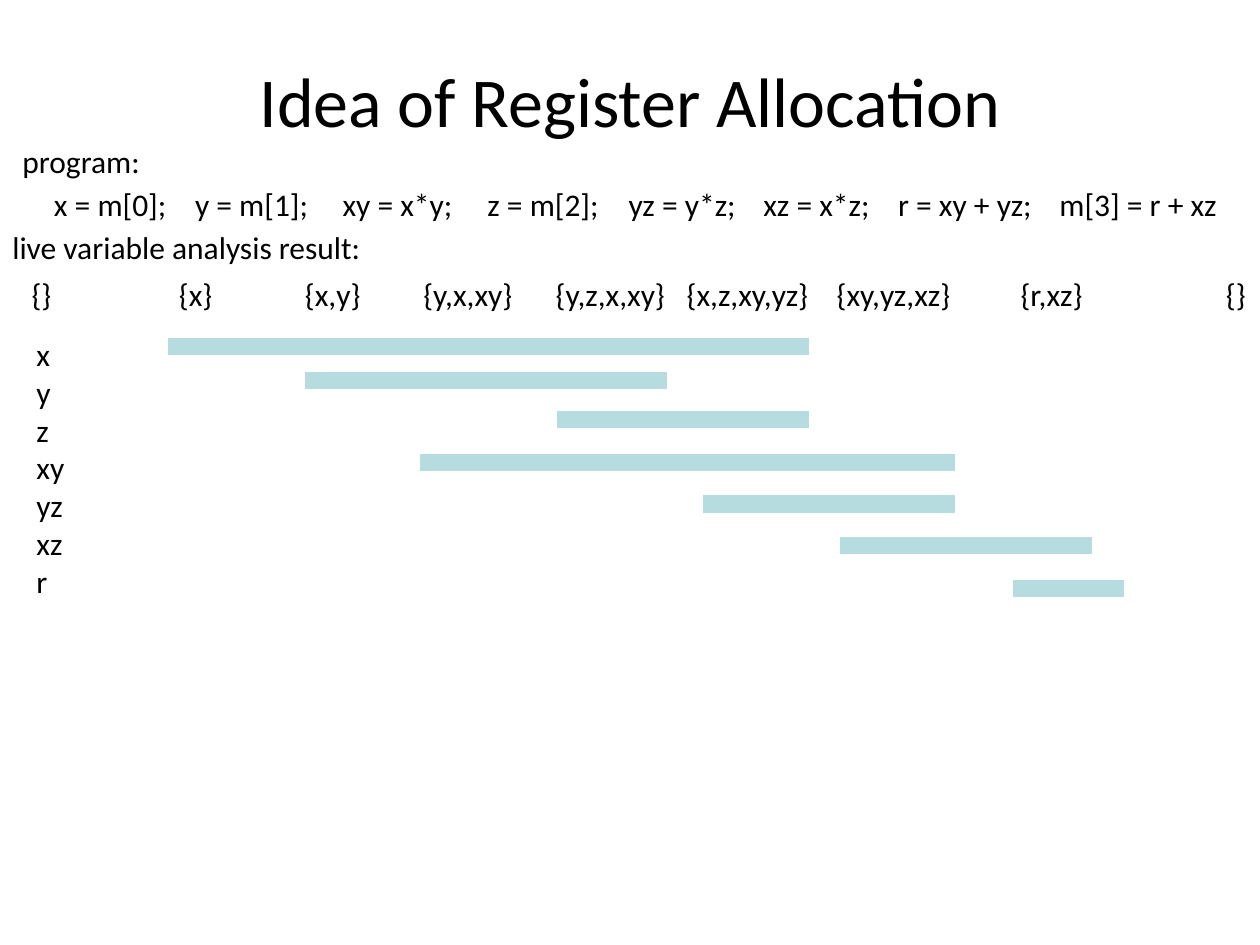
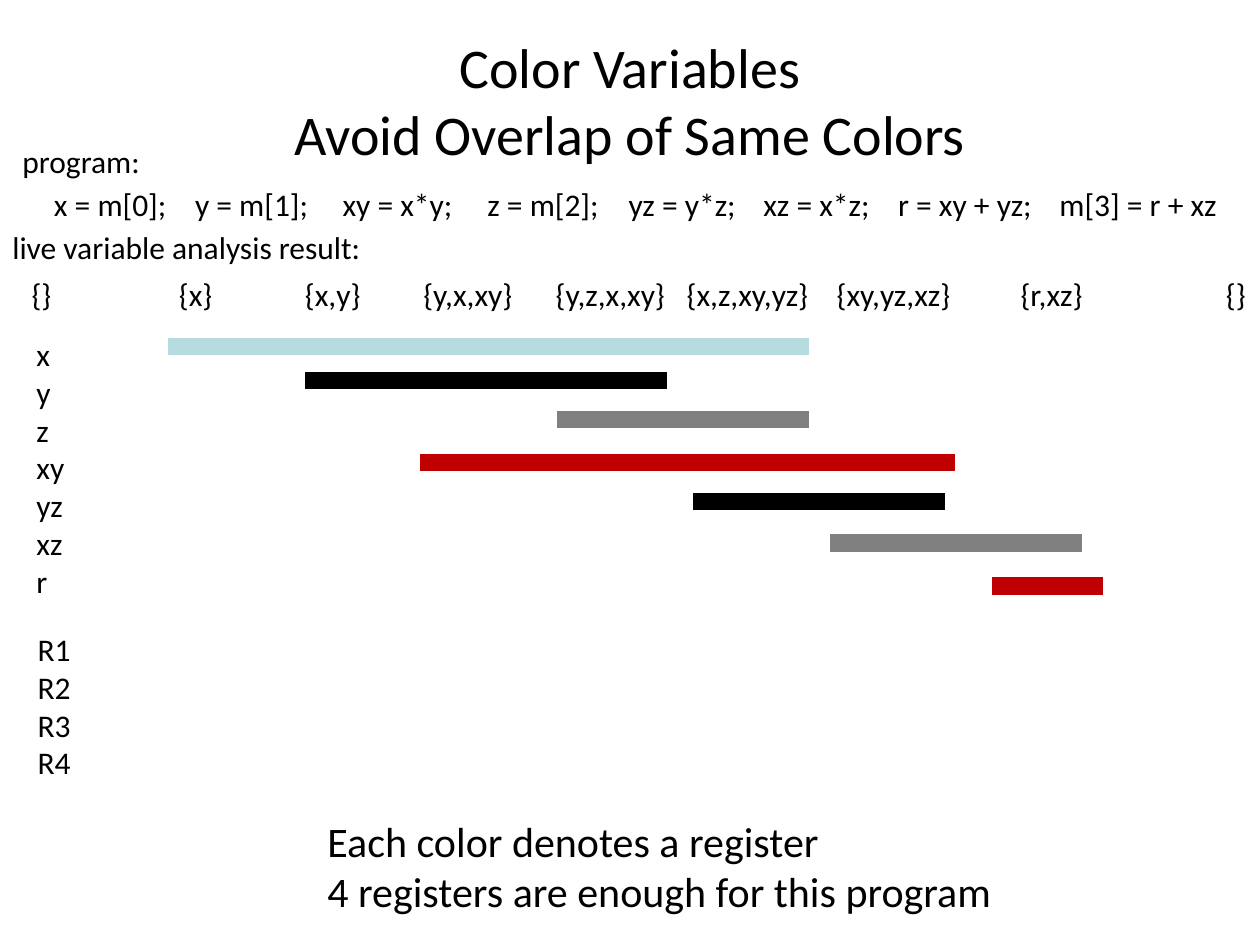
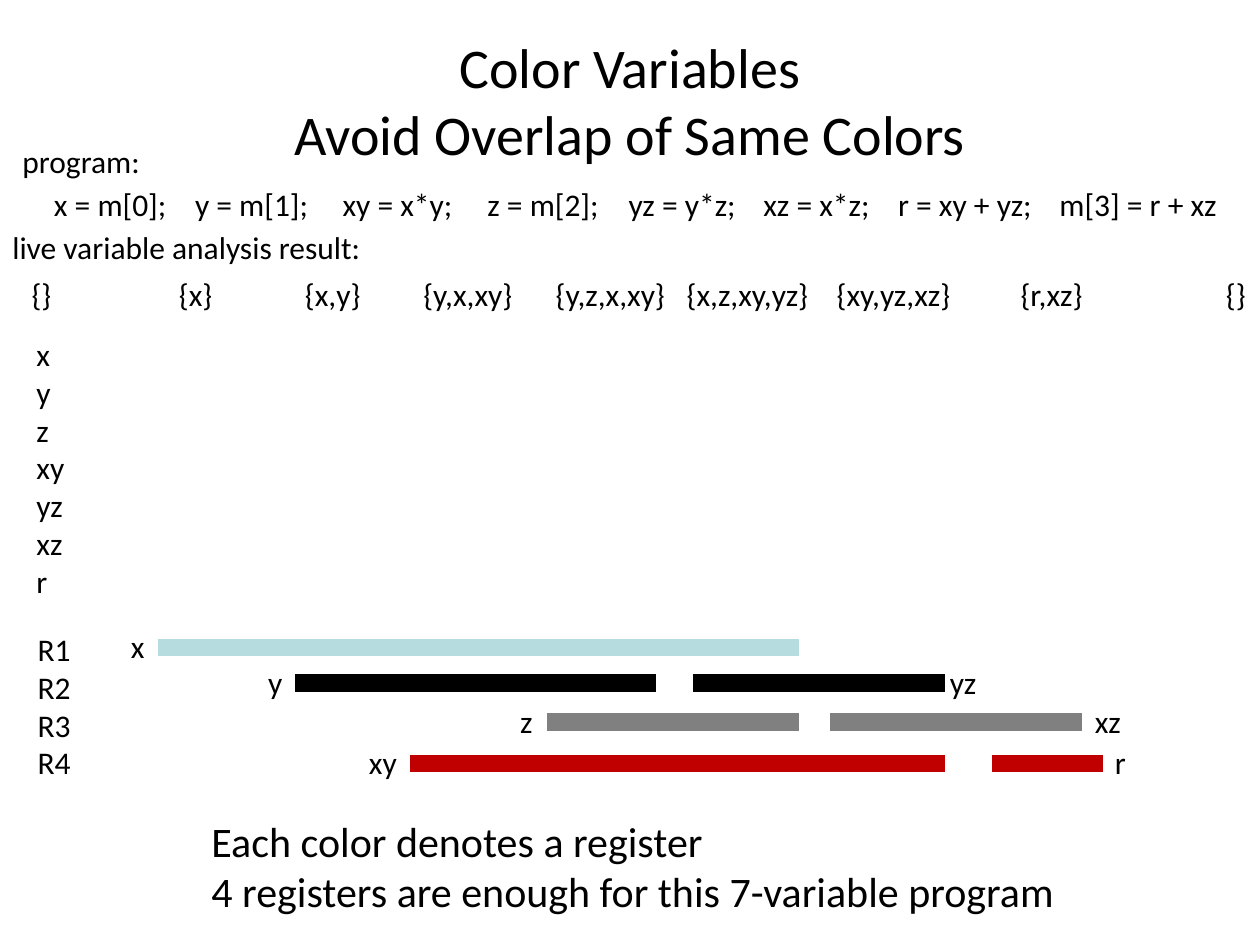
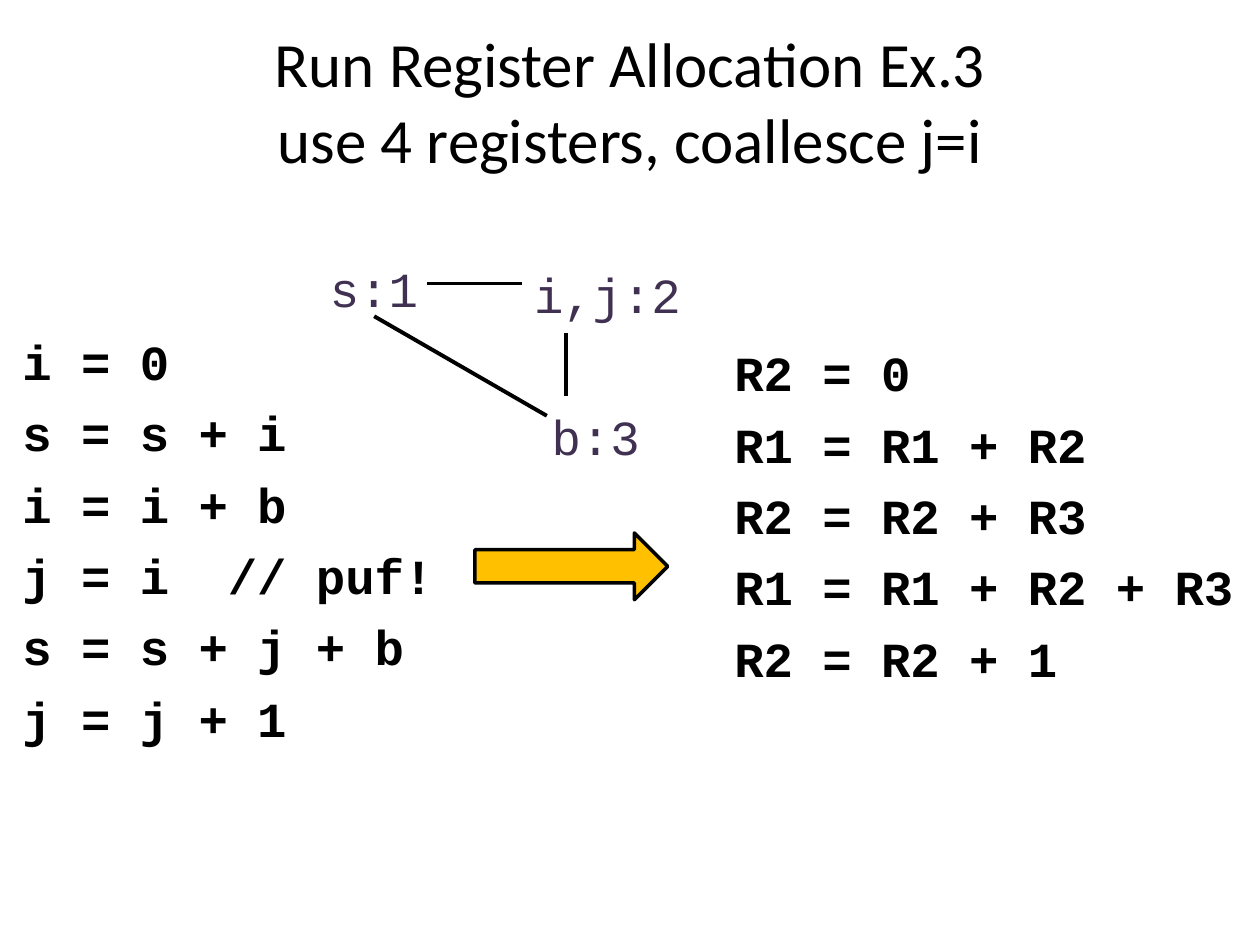
from dataclasses import dataclass

from lxml.etree import SubElement
from pptx import Presentation
from pptx.dml.color import RGBColor as Rgb
from pptx.enum.shapes import MSO_CONNECTOR as Conn, MSO_SHAPE as Shape
from pptx.enum.text import MSO_ANCHOR as Anchor, PP_ALIGN as Align
from pptx.oxml.ns import qn
from pptx.util import Inches, Pt


@dataclass(frozen=True)
class Theme:
    sans: str = "Calibri"
    mono: str = "Courier New"
    black: str = "000000"
    teal: str = "B6DCDF"
    gray: str = "808080"
    red: str = "C00000"
    gold: str = "FFC000"
    plum: str = "403152"
    body: int = 18
    note: int = 24
    code: int = 28
    bar: int = 10
    edge: float = 2.25


THEME = Theme()
COLORS = [THEME.teal, THEME.black, THEME.gray, THEME.red]
LIVES = {
    "x": (1.33, 6.42, 2.75, 0),
    "y": (2.42, 5.29, 3.02, 1),
    "z": (4.42, 6.42, 3.33, 2),
    "xy": (3.33, 7.58, 3.67, 3),
    "yz": (5.58, 7.58, 4, 1),
    "xz": (6.67, 8.67, 4.33, 2),
    "r": (8.04, 8.92, 4.67, 3),
}
LATE = ("yz", "xz", "r")
TRACKS = [5.14, 5.42, 5.73, 6.06]
STEPS = ["x = m[0];", "y = m[1];", "xy = x*y;", "z = m[2];", "yz = y*z;",
         "xz = x*z;", "r = xy + yz;", "m[3] = r + xz"]
STEP_TABS = [1.12, 2.29, 3.44, 4.56, 5.63, 6.7, 7.98]
SETS = ["{}", "{x}", "{x,y}", "{y,x,xy}", "{y,z,x,xy}", "{x,z,xy,yz}",
        "{xy,yz,xz}", "{r,xz}", "{}"]
SET_TABS = [1.17, 2.17, 3.11, 4.16, 5.2, 6.39, 7.85, 9.48]


class Deck:
    """Holds the theme and the current slide, and draws each kind of element."""

    def __init__(self, theme):
        self.theme = theme
        self.show = Presentation()
        self.show.slide_width = Inches(10)
        self.show.slide_height = Inches(7.5)

    def page(self):
        self.slide = self.show.slides.add_slide(self.show.slide_layouts[6])

    def text(self, box, lines, size=None, font=None, color=None, bold=False,
             align=Align.LEFT, gap=0, wrap=True):
        shape = self.slide.shapes.add_textbox(*map(Inches, box))
        frame = shape.text_frame
        frame.word_wrap = wrap
        for i, line in enumerate(lines):
            para = frame.add_paragraph() if i else frame.paragraphs[0]
            para.alignment = align
            para.space_before = Pt(gap)
            for j, part in enumerate(line.split("\n")):
                if j:
                    para.add_line_break()
                run = para.add_run()
                run.text = part
                run.font.size = Pt(size or self.theme.body)
                run.font.name = font or self.theme.sans
                run.font.bold = bold
                run.font.color.rgb = Rgb.from_string(color or self.theme.black)
        return frame

    def title(self, text, size, top=0.3, height=0.98):
        frame = self.text((0.5, top, 9, height), [text], size,
                          align=Align.CENTER)
        frame.vertical_anchor = Anchor.MIDDLE

    def row(self, box, cells, tabs, inset=0.1):
        frame = self.text(box, ["\t".join(cells)])
        frame.margin_left = Inches(inset)
        frame.margin_right = 0
        stops = SubElement(frame.paragraphs[0]._p.get_or_add_pPr(),
                           qn("a:tabLst"))
        for tab in tabs:
            SubElement(stops, qn("a:tab"), pos=str(Inches(tab)), algn="l")

    def code(self, box, lines):
        self.text(box, lines, self.theme.code, self.theme.mono, bold=True,
                  gap=7.2)

    def node(self, box, name):
        self.text(box, [name], self.theme.code, self.theme.mono,
                  self.theme.plum, wrap=False)

    def line(self, start, end, color, width):
        link = self.slide.shapes.add_connector(
            Conn.STRAIGHT, *map(Inches, (*start, *end)))
        link.line.color.rgb = Rgb.from_string(color)
        link.line.width = Pt(width)
        SubElement(link._element.spPr, qn("a:effectLst"))

    def bar(self, left, right, top, color):
        self.line((left, top), (right, top), color, self.theme.bar)

    def arrow(self, box):
        shape = self.slide.shapes.add_shape(Shape.RIGHT_ARROW,
                                            *map(Inches, box))
        shape.shadow.inherit = False
        shape.fill.solid()
        shape.fill.fore_color.rgb = Rgb.from_string(self.theme.gold)
        shape.line.color.rgb = Rgb.from_string(self.theme.black)
        shape.line.width = Pt(2)

    def program(self, title, size):
        self.page()
        self.title(title, size)
        self.row((0.33, 1.42, 9.58, 0.4), STEPS, STEP_TABS)
        self.text((0.19, 2.61, 0.42, 2.22), LIVES, wrap=False)
        self.row((0.08, 2.13, 9.92, 0.4), SETS, SET_TABS, 0.17)
        self.text((0, 1.76, 3, 0.4), ["live variable analysis result:"])
        self.text((0.08, 1.08, 3, 0.4), ["program:"])

    def colored(self, left, width, note):
        self.program("Color Variables\nAvoid Overlap of Same Colors", 32)
        self.text((0.2, 4.95, 0.47, 1.31), ["R1", "R2", "R3", "R4"],
                  wrap=False)
        self.text((left, 6.42, width, 0.91),
                  ["Each color denotes a register", note], self.theme.note)

    def label(self, name, left, right, top):
        width = 0.2 + 0.11 * len(name)
        spot = right if name in LATE else left - width
        if name == "yz":
            spot -= 0.06
        self.text((spot, top - 0.21, width, 0.4), [name], wrap=False)


def shift(name):
    return 0.17 if name == "r" else 0.08


def idea(deck):
    deck.program("Idea of Register Allocation", 40)
    for left, right, top, _ in LIVES.values():
        deck.bar(left, right, top, THEME.teal)


def paint(deck):
    deck.colored(2.5, 5.58, "4 registers are enough for this program")
    for name, (left, right, top, reg) in LIVES.items():
        move, lift = (shift(name), 0.02) if name in LATE else (0, 0)
        deck.bar(left - move, right - move, top - lift, COLORS[reg])


def pack(deck):
    deck.colored(1.58, 7.67,
                 "4 registers are enough for this 7-variable program")
    for name, (left, right, _, reg) in LIVES.items():
        span = left - shift(name), right - shift(name), TRACKS[reg]
        deck.bar(*span, COLORS[reg])
        deck.label(name, *span)


def merge(deck):
    deck.page()
    deck.title("Run Register Allocation Ex.3\nuse 4 registers, coallesce j=i",
               36, 0.17, 1.25)
    deck.code((0.08, 2.58, 4, 3.5),
              ["i = 0", "s = s + i", "i = i + b", "j = i  // puf!",
               "s = s + j + b", "j = j + 1"])
    deck.arrow((3.77, 4.23, 1.53, 0.53))
    deck.code((5.73, 2.67, 4.27, 3.33),
              ["R2 = 0", "R1 = R1 + R2", "R2 = R2 + R3",
               "R1 = R1 + R2 + R3", "R2 = R2 + 1"])
    deck.node((2.52, 2, 0.93, 0.57), "s:1")
    deck.node((4.14, 2.05, 1.45, 0.57), "i,j:2")
    deck.node((4.28, 3.18, 0.93, 0.57), "b:3")
    for start, end in [((3.39, 2.25), (4.14, 2.25)),
                       ((2.97, 2.51), (4.34, 3.3)),
                       ((4.49, 2.64), (4.49, 3.14))]:
        deck.line(start, end, THEME.black, THEME.edge)


def main():
    deck = Deck(THEME)
    for draw in (idea, paint, pack, merge):
        draw(deck)
    deck.show.save("out.pptx")


if __name__ == "__main__":
    main()
